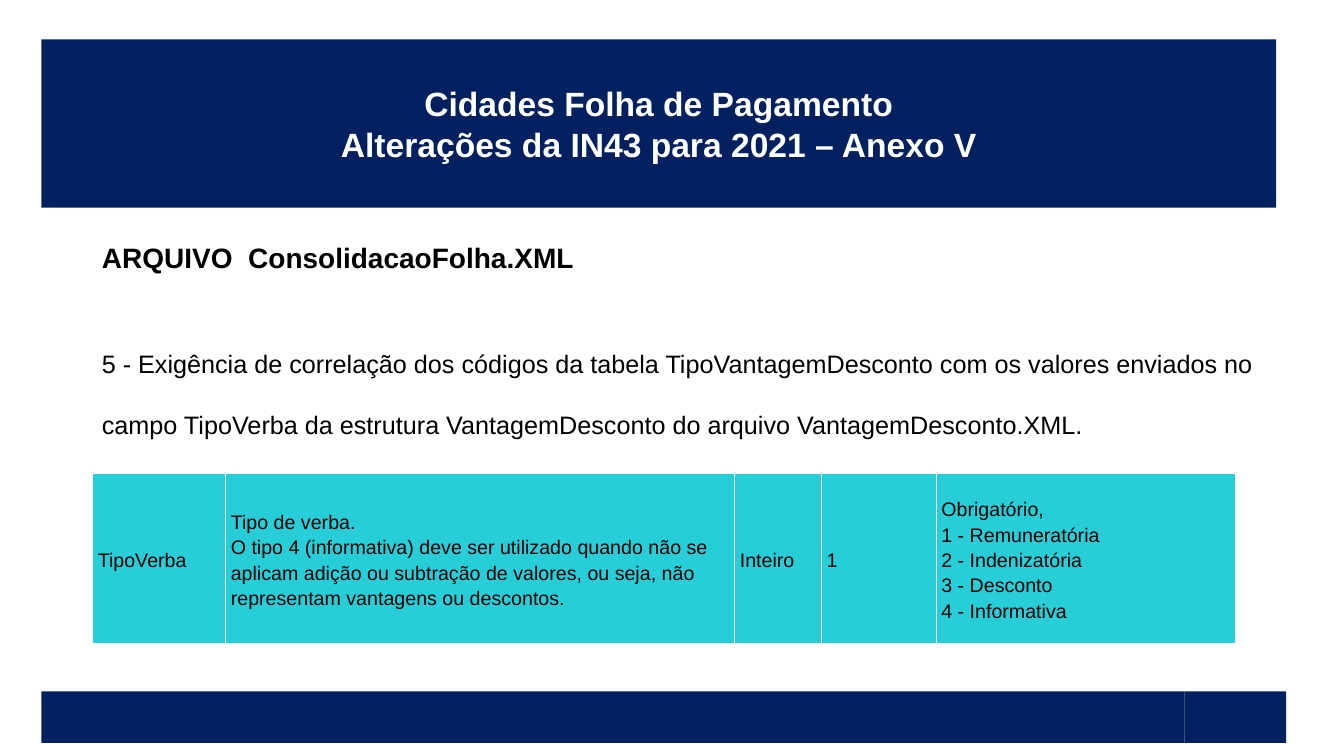
import lxml.etree
import pptx
import pptx.dml.color
import pptx.enum.shapes
import pptx.enum.text
import pptx.oxml
import pptx.oxml.ns
import pptx.util

Inches = pptx.util.Inches
MIDDLE = pptx.enum.text.MSO_ANCHOR.MIDDLE
NAVY = "002060"
TURQUOISE = "27CED7"
WHITE = "FFFFFF"
BLACK = "000000"
VERB_COLUMNS = [
    (1.32, ["TipoVerba"]),
    (5.05, ["Tipo de verba.",
            "O tipo 4 (informativa) deve ser utilizado quando não se aplicam adição ou "
            "subtração de valores, ou seja, não representam vantagens ou descontos."]),
    (0.86, ["Inteiro"]),
    (1.14, ["1"]),
    (2.97, ["Obrigatório,", "1 - Remuneratória", "2 - Indenizatória",
            "3 - Desconto", "4 - Informativa"]),
]


def color(value):
    return pptx.dml.color.RGBColor.from_string(value)


def paint(target, value):
    target.fill.solid()
    target.fill.fore_color.rgb = color(value)


def place(shape, left, top, width, height):
    values = {"left": left, "top": top, "width": width, "height": height}
    for name, value in values.items():
        setattr(shape, name, Inches(value))


def write(para, text, size, bold=False, shade=BLACK, **layout):
    para.text = text
    for name, value in layout.items():
        setattr(para, name, value)
    font_values = {"name": "Arial", "size": pptx.util.Pt(size), "bold": bold}
    for span in para.runs:
        for name, value in font_values.items():
            setattr(span.font, name, value)
        span.font.color.rgb = color(shade)


def remove_bullet(para):
    properties = para._p.get_or_add_pPr()
    properties.set("marL", "0")
    properties.set("indent", "0")
    lxml.etree.SubElement(properties, pptx.oxml.ns.qn("a:buNone"))


def add_title(page):
    title = page.shapes.title
    place(title, 0.41, 0.39, 12.25, 1.67)
    paint(title, NAVY)
    frame = title.text_frame
    frame.auto_size = pptx.enum.text.MSO_AUTO_SIZE.NONE
    frame.vertical_anchor = MIDDLE
    lines = ["Cidades Folha de Pagamento", "Alterações da IN43 para 2021 – Anexo V"]
    for index, line in enumerate(lines):
        para = frame.add_paragraph() if index else frame.paragraphs[0]
        write(para, line, 24, True, WHITE, alignment=pptx.enum.text.PP_ALIGN.CENTER)


def add_body(page):
    body = page.placeholders[1]
    place(body, 0.91, 2.17, 11.85, 2.45)
    frame = body.text_frame
    frame.auto_size = pptx.enum.text.MSO_AUTO_SIZE.NONE
    heading = frame.paragraphs[0]
    requirement = frame.add_paragraph()
    for para in (heading, requirement):
        remove_bullet(para)
    write(heading, "ARQUIVO  ConsolidacaoFolha.XML", 20, True,
          line_spacing=1.5, space_before=pptx.util.Pt(0))
    write(requirement,
          "5 - Exigência de correlação dos códigos da tabela TipoVantagemDesconto com os "
          "valores enviados no campo TipoVerba da estrutura VantagemDesconto do arquivo "
          "VantagemDesconto.XML.",
          18, line_spacing=2.0, space_before=pptx.util.Pt(31.5))


def add_borders(cell):
    properties = cell._tc.get_or_add_tcPr()
    for index, side in enumerate(["lnL", "lnR", "lnT", "lnB"]):
        border = pptx.oxml.parse_xml(
            f'<a:{side} {pptx.oxml.ns.nsdecls("a")} w="12700"><a:solidFill>'
            f'<a:srgbClr val="{WHITE}"/></a:solidFill></a:{side}>')
        properties.insert(index, border)


def add_verb_table(page):
    frame = page.shapes.add_table(1, len(VERB_COLUMNS), Inches(0.92), Inches(4.7),
                                  Inches(11.33), Inches(1.69))
    table = frame.table
    table.first_row = False
    table.horz_banding = False
    cell_values = {"margin_left": Inches(0.05), "margin_right": Inches(0.05),
                   "margin_top": 0, "margin_bottom": 0, "vertical_anchor": MIDDLE}
    for index, (width, lines) in enumerate(VERB_COLUMNS):
        table.columns[index].width = Inches(width)
        cell = table.cell(0, index)
        for name, value in cell_values.items():
            setattr(cell, name, value)
        paint(cell, TURQUOISE)
        add_borders(cell)
        for number, line in enumerate(lines):
            text_frame = cell.text_frame
            para = text_frame.add_paragraph() if number else text_frame.paragraphs[0]
            write(para, line, 14, line_spacing=1.15)


def add_footer_bar(page, left, width):
    bar = page.shapes.add_shape(pptx.enum.shapes.MSO_SHAPE.RECTANGLE, Inches(left),
                                Inches(6.86), Inches(width), Inches(0.51))
    bar.shadow.inherit = False
    paint(bar, NAVY)
    bar.line.fill.background()


def main():
    deck = pptx.Presentation()
    deck.slide_width = Inches(40) // 3
    deck.slide_height = Inches(7.5)
    page = deck.slides.add_slide(deck.slide_layouts[1])
    add_title(page)
    add_footer_bar(page, 0.41, 11.34)
    add_footer_bar(page, 11.75, 1.01)
    add_body(page)
    add_verb_table(page)
    deck.save("out.pptx")


if __name__ == "__main__":
    main()
